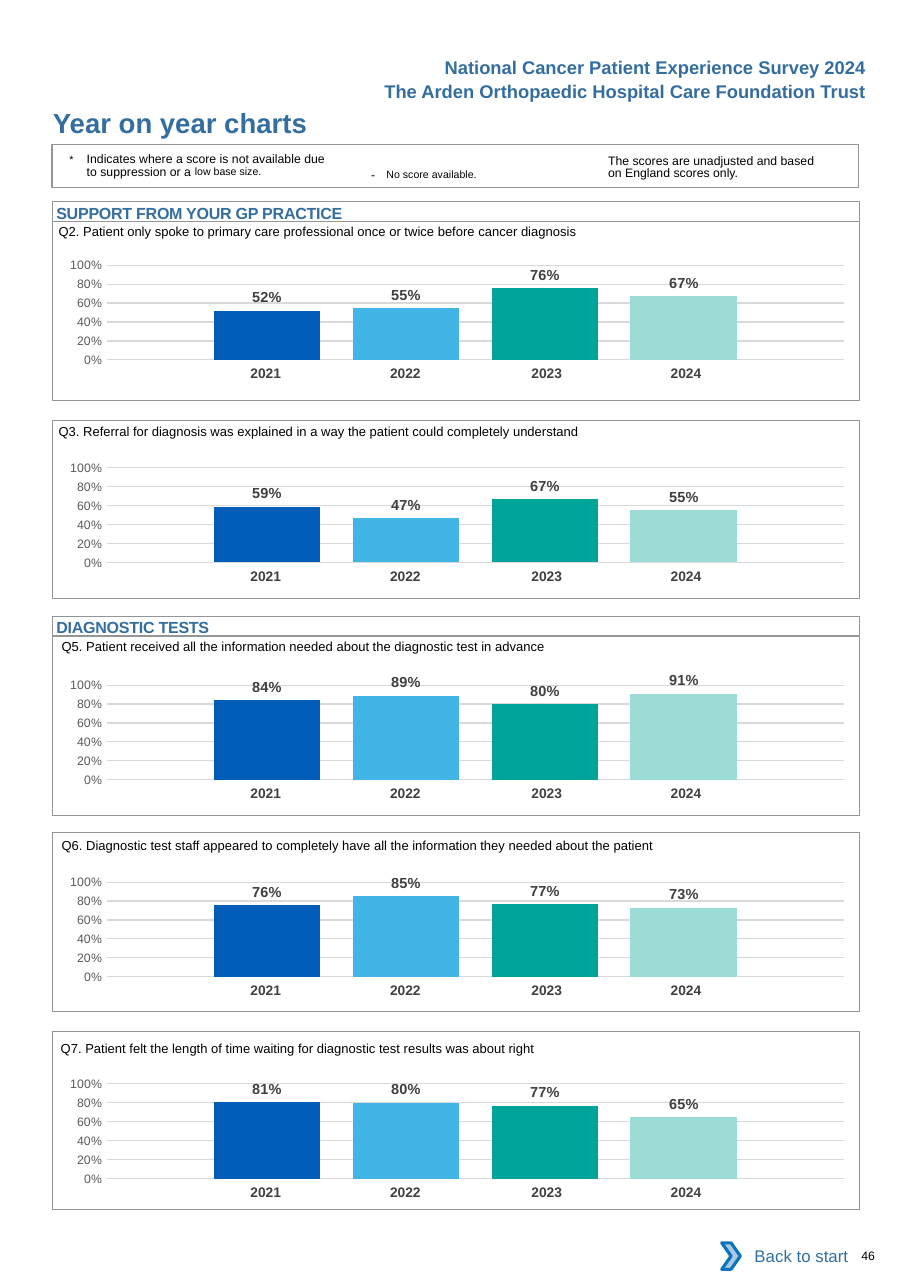
from lxml import etree
from pptx import Presentation
from pptx.chart.data import CategoryChartData
from pptx.dml.color import RGBColor
from pptx.enum.chart import XL_CHART_TYPE as ChartType
from pptx.enum.chart import XL_LABEL_POSITION as LabelPos
from pptx.enum.chart import XL_TICK_MARK as TickMark
from pptx.enum.shapes import MSO_SHAPE as Shape
from pptx.enum.text import MSO_ANCHOR as Anchor
from pptx.enum.text import PP_ALIGN as Align
from pptx.oxml.ns import qn
from pptx.util import Cm, Pt

BLUE = RGBColor(0x33, 0x6E, 0x9F)
BLACK = RGBColor(0, 0, 0)
WHITE = RGBColor(255, 255, 255)
BORDER = RGBColor(0x93, 0x95, 0x98)
GRID = RGBColor(0xD9, 0xD9, 0xD9)
AXIS_TEXT = RGBColor(0x59, 0x59, 0x59)
LABEL_TEXT = RGBColor(0x40, 0x40, 0x40)
YEAR_TEXT = RGBColor(0x41, 0x40, 0x42)
CHEVRON_FILL = RGBColor(0xA8, 0xC7, 0xE9)
CHEVRON_LINE = RGBColor(0x0A, 0x74, 0xBB)
YEAR_COLORS = {
    "2021": RGBColor(0x00, 0x5E, 0xB8),
    "2022": RGBColor(0x41, 0xB6, 0xE6),
    "2023": RGBColor(0x00, 0xA4, 0x99),
    "2024": RGBColor(0x9C, 0xDC, 0xD7),
}
YEAR_COLUMNS = ((3.22, 0), (3.22, 0), (3.4, 0.1), (3.22, 0.3))  # width, right inset
PLOT_AREA = {"x": 0.079, "y": 0.145, "w": 0.915, "h": 0.666}
LEFT, WIDTH = 1.22, 18.59
FRAME_HEIGHT = 4.11


class Page:
    """Holds the style and the current slide."""

    font = "Arial"

    def __init__(self, slide):
        self.shapes = slide.shapes

    def style(self, font, size, color, bold=False):
        font.name, font.size, font.bold = self.font, Pt(size), bold
        font.color.rgb = color

    def fill_text(self, tf, text, size, color=BLACK, bold=False, align=Align.LEFT,
                  insets=(0, 0, 0, 0), anchor=Anchor.TOP, spacing=0):
        tf.word_wrap = True
        tf.vertical_anchor = anchor
        (tf.margin_left, tf.margin_top,
         tf.margin_right, tf.margin_bottom) = map(Cm, insets)
        tf.text = text
        p = tf.paragraphs[0]
        p.alignment = align
        r = p.runs[0]
        self.style(r.font, size, color, bold)
        if spacing:
            r.font._element.set("spc", str(spacing))
        return p

    def text(self, left, top, width, height, text, size, **kw):
        sp = self.shapes.add_textbox(*map(Cm, (left, top, width, height)))
        return self.fill_text(sp.text_frame, text, size, **kw)

    def note(self, left, top, width, parts, hang=0, leading=None, inset=0.08):
        """parts: (text, size, baseline shift in percent)."""
        sp = self.shapes.add_textbox(*map(Cm, (left, top, width, 0.7)))
        tf = sp.text_frame
        tf.word_wrap = True
        tf.margin_left = tf.margin_right = tf.margin_bottom = 0
        tf.margin_top = Cm(inset)
        p = tf.paragraphs[0]
        if leading:
            p.line_spacing = Pt(leading)
        if hang:
            pPr = p._p.get_or_add_pPr()
            pPr.set("marL", str(Cm(hang)))
            pPr.set("indent", str(-Cm(hang)))
        for text, size, shift in parts:
            r = p.add_run()
            r.text = text
            self.style(r.font, size, BLACK)
            if shift:
                r.font._element.set("baseline", str(shift * 1000))

    def shape(self, left, top, width, height, kind=Shape.RECTANGLE,
              fill=None, line=None, weight=0.5):
        sp = self.shapes.add_shape(kind, *map(Cm, (left, top, width, height)))
        sp.shadow.inherit = False
        if fill is None:
            sp.fill.background()
        else:
            sp.fill.solid()
            sp.fill.fore_color.rgb = fill
        if line is None:
            sp.line.fill.background()
        else:
            sp.line.color.rgb = line
            sp.line.width = Pt(weight)
        return sp

    def section(self, top, title):
        sp = self.shape(LEFT, top, WIDTH, 0.46, line=BORDER)
        self.fill_text(sp.text_frame, title, 10.5, color=BLUE, bold=True,
                       insets=(0.08, 0.03, 0, 0), spacing=-15)

    def years(self, top):
        width = sum(w for w, _ in YEAR_COLUMNS)
        gf = self.shapes.add_table(1, len(YEAR_COLUMNS), Cm(4.39), Cm(top), Cm(width), Cm(0.69))
        table = gf.table
        table.first_row = table.horz_banding = False
        for i, (year, (w, right)) in enumerate(zip(YEAR_COLORS, YEAR_COLUMNS)):
            table.columns[i].width = Cm(w)
            cell = table.cell(0, i)
            cell.fill.background()
            (cell.margin_left, cell.margin_top,
             cell.margin_right, cell.margin_bottom) = map(Cm, (0.25, 0.13, right, 0.13))
            p = cell.text_frame.paragraphs[0]
            p.text = year
            p.alignment = Align.CENTER
            self.style(p.runs[0].font, 9, YEAR_TEXT, True)

    def chart(self, top, values):
        data = CategoryChartData(number_format="0%")
        data.categories = ["1"]
        for i, value in enumerate(values, 1):
            data.add_series(f"Series {i}", [value / 100])
        box = map(Cm, (0.99, top, WIDTH, 3.28))
        chart = self.shapes.add_chart(ChartType.COLUMN_CLUSTERED, *box, data).chart
        chart.has_legend = chart.has_title = False
        chart.font.name, chart.font.size = "Calibri", Pt(10)
        # Axes
        chart.category_axis.visible = False
        axis = chart.value_axis
        axis.minimum_scale, axis.maximum_scale, axis.major_unit = 0, 1, 0.2
        axis.major_tick_mark = axis.minor_tick_mark = TickMark.NONE
        axis.format.line.fill.background()
        axis.major_gridlines.format.line.color.rgb = GRID
        axis.major_gridlines.format.line.width = Pt(0.75)
        axis.tick_labels.number_format = "0%"
        axis.tick_labels.number_format_is_linked = False
        self.style(axis.tick_labels.font, 8, AXIS_TEXT)
        # Bars and labels
        plot = chart.plots[0]
        plot.gap_width, plot.overlap, plot.vary_by_categories = 200, -30, False
        for series, color in zip(plot.series, YEAR_COLORS.values()):
            series.format.fill.solid()
            series.format.fill.fore_color.rgb = color
            labels = series.data_labels
            labels.show_value = True
            labels.position = LabelPos.OUTSIDE_END
            labels.number_format = "0%"
            labels.number_format_is_linked = False
            self.style(labels.font, 9.5, LABEL_TEXT, True)
        # Fixed inner plot area
        area = chart._chartSpace.find(".//" + qn("c:plotArea"))
        for old in area.findall(qn("c:layout")):
            area.remove(old)
        layout = etree.Element(qn("c:layout"))
        manual = etree.SubElement(layout, qn("c:manualLayout"))
        settings = {"layoutTarget": "inner", "xMode": "edge", "yMode": "edge", **PLOT_AREA}
        for name, value in settings.items():
            etree.SubElement(manual, qn(f"c:{name}")).set("val", str(value))
        area.insert(0, layout)

    def question(self, text, left, text_top, frame_top, chart_top, values):
        self.text(left, text_top, 18, 0.61, text, 8.5, insets=(0, 0.23, 0, 0))
        self.years(chart_top + 2.67)
        self.chart(chart_top, values)
        self.shape(LEFT, frame_top, WIDTH, FRAME_HEIGHT, line=BORDER)


SECTIONS = [
    (4.65, "SUPPORT FROM YOUR GP PRACTICE"),
    (14.2, "DIAGNOSTIC TESTS"),
]
# Question, text left, text top, frame top, chart top, percentages by year
QUESTIONS = [
    ("Q2. Patient only spoke to primary care professional once or twice before cancer diagnosis",
     1.35, 4.93, 5.11, 5.64, (52, 55, 76, 67)),
    ("Q3. Referral for diagnosis was explained in a way the patient could completely understand",
     1.35, 9.53, 9.68, 10.31, (59, 47, 67, 55)),
    ("Q5. Patient received all the information needed about the diagnostic test in advance",
     1.42, 14.5, 14.68, 15.32, (84, 89, 80, 91)),
    ("Q6. Diagnostic test staff appeared to completely have all the information they needed "
     "about the patient", 1.42, 19.08, 19.2, 19.86, (76, 85, 77, 73)),
    ("Q7. Patient felt the length of time waiting for diagnostic test results was about right",
     1.4, 23.75, 23.77, 24.51, (81, 80, 77, 65)),
]


def main():
    prs = Presentation()
    prs.slide_width, prs.slide_height = Cm(20.98), Cm(29.69)
    page = Page(prs.slides.add_slide(prs.slide_layouts[6]))

    # Header
    for top, line in ((1.17, "National Cancer Patient Experience Survey 2024"),
                      (1.73, "The Arden Orthopaedic Hospital Care Foundation Trust")):
        page.text(6.22, top, 14, 0.76, line, 12, color=BLUE, bold=True,
                  align=Align.RIGHT, insets=(0.25, 0.13, 0.25, 0.13))
    page.text(1.22, 2.44, 11.43, 0.76, "Year on year charts", 18, color=BLUE, bold=True)

    # Notes
    page.shape(1.2, 3.33, WIDTH, 0.99, line=BORDER, weight=0.75)
    page.note(1.6, 3.5, 6.1, [("*\t", 12, 3),
              ("Indicates where a score is not available due to suppression or a ", 8, 0),
              ("low base size.", 12, 7)], hang=0.4, leading=8.1)
    page.note(8.56, 3.58, 4.4, [("-\t", 8, 0), ("No score available.", 12, 3)],
              hang=0.35, inset=0.13)
    page.note(14.02, 3.5, 5.1, [("The scores are unadjusted and based on England scores only.",
                                 8, 0)], leading=8.1)

    # Sections and questions
    for top, title in SECTIONS:
        page.section(top, title)
    for question in QUESTIONS:
        page.question(*question)

    # Footer
    sp = page.shape(16.81, 28.42, 3, 1.07, fill=WHITE)
    page.fill_text(sp.text_frame, "Back to start", 11, color=BLUE, align=Align.RIGHT,
                   insets=(0.25, 0.13, 0.25, 0.13), anchor=Anchor.MIDDLE)
    page.shape(16.64, 28.65, 0.43, 0.61, Shape.CHEVRON, CHEVRON_FILL, CHEVRON_LINE, 2)
    page.text(19.86, 28.78, 1, 0.33, "46", 8)
    prs.save("out.pptx")


if __name__ == "__main__":
    main()
